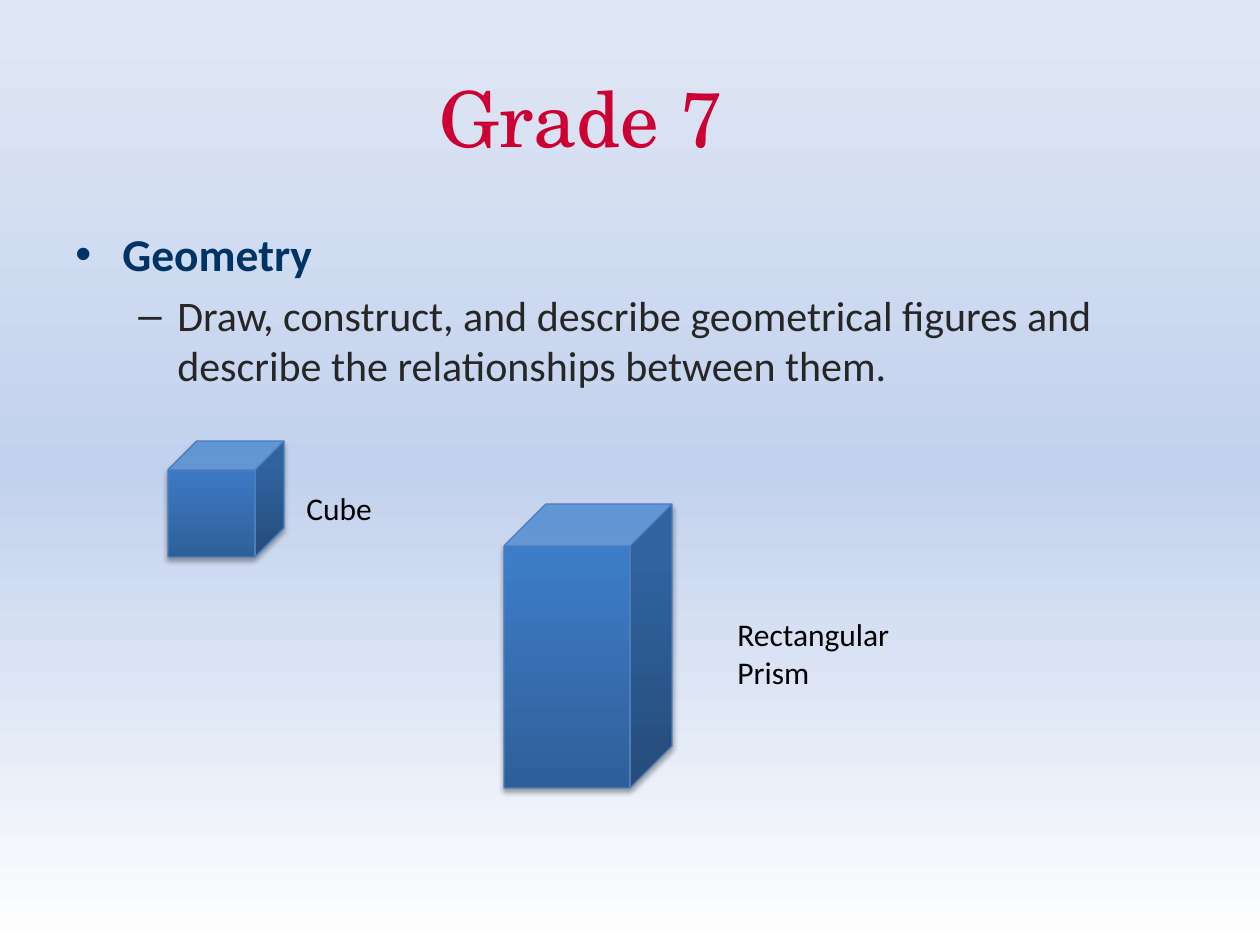
from dataclasses import dataclass

from lxml.etree import SubElement
from pptx import Presentation
from pptx.dml.color import RGBColor
from pptx.enum.shapes import MSO_SHAPE
from pptx.enum.text import MSO_ANCHOR, MSO_AUTO_SIZE, PP_ALIGN
from pptx.oxml.ns import qn
from pptx.util import Pt

SCALE = 914400 / 126
FONT = "Calibri"


@dataclass
class Box:
    left: int
    top: int
    width: int
    height: int


@dataclass
class Item:
    text: str
    mark: str
    level: int
    left: int
    hang: int
    size: int
    color: str
    bold: bool
    before: int


@dataclass
class Label:
    box: Box
    lines: list[str]
    wrap: bool


SKY = [(0, "FFFFFF"), (50, "C2D1ED"), (100, "E1E8F5")]
BLUE = [(0, "2F5F99"), (80, "3D7CC7"), (100, "3A7CCB")]
SOLIDS = [Box(504, 504, 168, 284), Box(168, 441, 116, 116)]
ITEMS = [
    Item("Geometry", "•", 0, 47, 47, 26, "003366", True, 0),
    Item("Draw, construct, and describe geometrical figures and "
         "describe the relationships between them.",
         "–", 1, 102, 39, 24, "262626", False, 5),
]
LABELS = [
    Label(Box(294, 483, 147, 53), ["Cube"], True),
    Label(Box(725, 609, 217, 89), ["Rectangular", "Prism"], False),
]


def px(value: int) -> int:
    return round(value * SCALE)


def place(box: Box) -> list[int]:
    return [px(v) for v in (box.left, box.top, box.width, box.height)]


def rgb(code: str) -> RGBColor:
    return RGBColor.from_string(code)


def blend(fill, root, stops: list[tuple[int, str]]) -> None:
    fill.gradient()
    fill.gradient_angle = 90
    group = next(root.iter(qn("a:gsLst")))
    for old in list(group):
        group.remove(old)
    for pos, code in stops:
        stop = SubElement(group, qn("a:gs"), pos=str(pos * 1000))
        SubElement(stop, qn("a:srgbClr"), val=code)


def write(para, text: str, size: int, color: str,
          face: str = FONT, bold: bool = False) -> None:
    run = para.add_run()
    run.text = text
    font = run.font
    font.name, font.size, font.bold = face, Pt(size), bold
    font.color.rgb = rgb(color)


def frame(slide, box: Box, wrap: bool = True):
    text = slide.shapes.add_textbox(*place(box)).text_frame
    text.word_wrap = wrap
    return text


def title(slide) -> None:
    text = frame(slide, Box(63, 38, 1134, 157))
    text.vertical_anchor = MSO_ANCHOR.MIDDLE
    text.margin_right = px(109)
    para = text.paragraphs[0]
    para.alignment = PP_ALIGN.CENTER
    write(para, "Grade 7", 44, "CC0033", "TeX Gyre Schola")


def body(slide, items: list[Item]) -> None:
    text = frame(slide, Box(63, 220, 1134, 624))
    for i, item in enumerate(items):
        para = text.add_paragraph() if i else text.paragraphs[0]
        para.level = item.level
        props = para._p.get_or_add_pPr()
        props.set("marL", str(px(item.left)))
        props.set("indent", str(-px(item.hang)))
        SubElement(props, qn("a:buFont"), typeface="Arial")
        SubElement(props, qn("a:buChar"), char=item.mark)
        if item.before:
            para.space_before = Pt(item.before)
        write(para, item.text, item.size, item.color, bold=item.bold)


def solid(slide, box: Box) -> None:
    cube = slide.shapes.add_shape(MSO_SHAPE.CUBE, *place(box))
    blend(cube.fill, cube.element, BLUE)
    cube.line.color.rgb = rgb("4B7EBC")
    cube.line.width = Pt(0.75)
    cube.shadow.inherit = False
    glow = next(cube.element.iter(qn("a:effectLst")))
    shade = SubElement(glow, qn("a:outerShdw"), blurRad=str(Pt(3.1)),
                       dist=str(Pt(1.8)), dir="5400000", rotWithShape="0")
    tone = SubElement(shade, qn("a:srgbClr"), val="000000")
    SubElement(tone, qn("a:alpha"), val="35000")


def label(slide, note: Label) -> None:
    text = frame(slide, note.box, note.wrap)
    text.auto_size = MSO_AUTO_SIZE.SHAPE_TO_FIT_TEXT
    for i, line in enumerate(note.lines):
        para = text.add_paragraph() if i else text.paragraphs[0]
        write(para, line, 18, "000000")


def main() -> None:
    deck = Presentation()
    deck.slide_width, deck.slide_height = px(1260), px(945)
    slide = deck.slides.add_slide(deck.slide_layouts[6])
    blend(slide.background.fill, slide.element, SKY)
    title(slide)
    body(slide, ITEMS)
    for box in SOLIDS:
        solid(slide, box)
    for note in LABELS:
        label(slide, note)
    deck.save("out.pptx")


if __name__ == "__main__":
    main()
